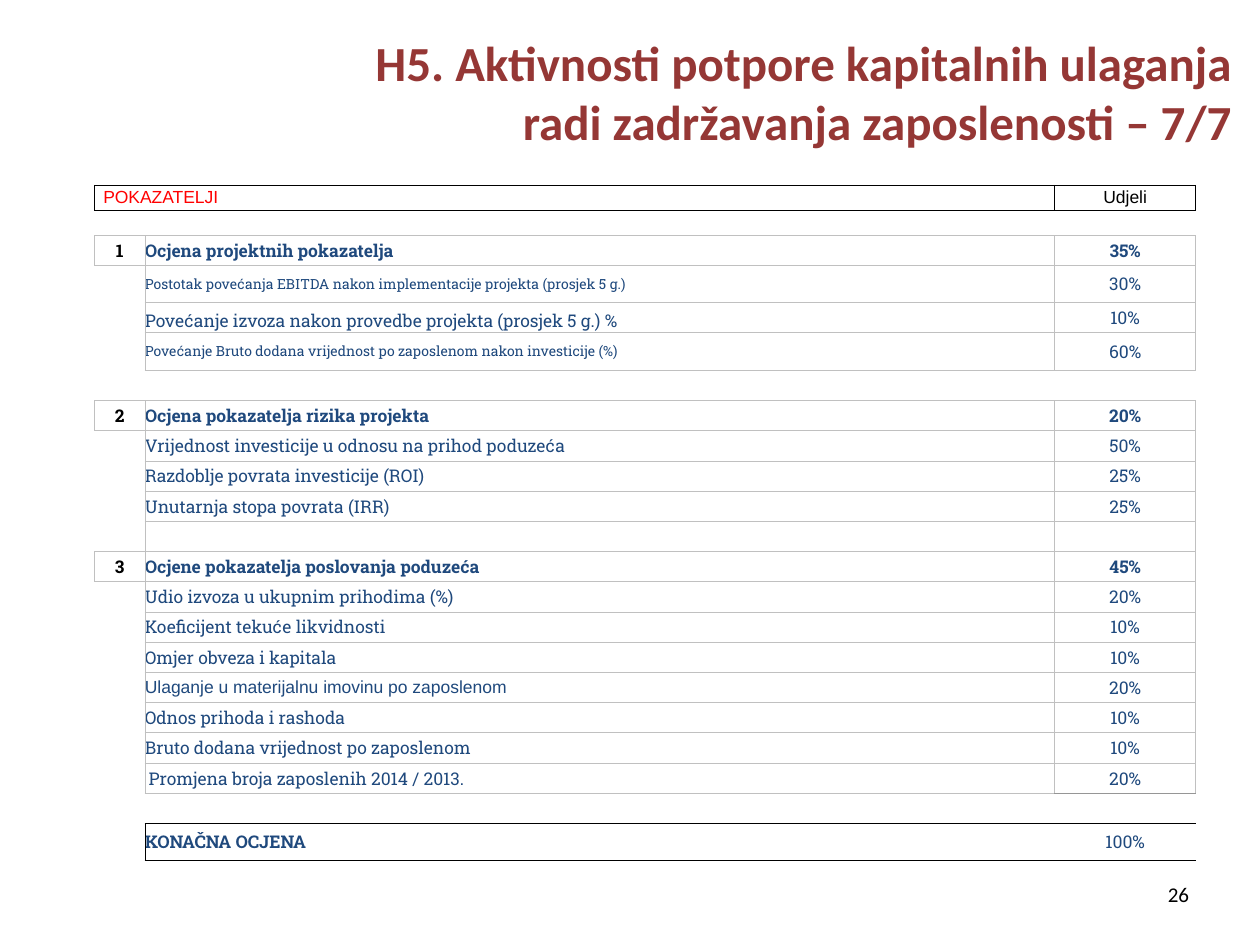
from lxml import etree
from pptx import Presentation
from pptx import util as u
from pptx.dml.color import RGBColor
from pptx.enum import text as t
from pptx.oxml import ns

RED, NAVY, BLACK = "953735", "1F497D", "000000"
GREY, DARK_GREY = "C0C0C0", "969696"
SLAB = "Roboto Slab"
ROW = 0.24

# kind, number, label, share, then row height, label size and label font where they differ
ROWS = [
    ("title", "", "POKAZATELJI", "Udjeli", {"height": 0.2}),
    ("gap", "", "", "", {"height": 0.2}),
    ("head", "1", "Ocjena projektnih pokazatelja", "35%", {}),
    ("item", "", "Postotak povećanja EBITDA nakon implementacije projekta (prosjek 5 g.)", "30%",
     {"height": 0.29, "size": 8}),
    ("item", "", "Povećanje izvoza nakon provedbe projekta (prosjek 5 g.) %", "10%",
     {"anchor": t.MSO_ANCHOR.BOTTOM}),
    ("item", "", "Povećanje Bruto dodana vrijednost po zaposlenom nakon investicije (%)", "60%",
     {"height": 0.3, "size": 8}),
    ("gap", "", "", "", {}),
    ("head", "2", "Ocjena pokazatelja rizika projekta", "20%", {}),
    ("item", "", "Vrijednost investicije u odnosu na prihod poduzeća", "50%", {}),
    ("item", "", "Razdoblje povrata investicije (ROI)", "25%", {}),
    ("item", "", "Unutarnja stopa povrata (IRR)", "25%", {}),
    ("item", "", "", "", {}),
    ("head", "3", "Ocjene pokazatelja poslovanja poduzeća", "45%", {}),
    ("item", "", "Udio izvoza u ukupnim prihodima (%)", "20%", {}),
    ("item", "", "Koeficijent tekuće likvidnosti", "10%", {}),
    ("item", "", "Omjer obveza i kapitala", "10%", {}),
    ("item", "", "Ulaganje u materijalnu imovinu po zaposlenom", "20%", {"font": "Arial"}),
    ("item", "", "Odnos prihoda i rashoda", "10%", {}),
    ("item", "", "Bruto dodana vrijednost po zaposlenom", "10%", {}),
    ("item", "", "Promjena broja zaposlenih 2014 / 2013.", "20%", {"indent": 0.03}),
    ("gap", "", "", "", {}),
    ("total", "", "KONAČNA OCJENA", "100%", {"height": 0.29}),
]

# Sides that each kind of row outlines, by column, and the line colour
OUTLINES = {
    "title": (("LTB", "TRB", "LTRB"), BLACK),
    "gap": (("", "", ""), GREY),
    "head": (("LTRB", "LTRB", "LTRB"), GREY),
    "item": (("", "LTRB", "LTRB"), GREY),
    "total": (("", "LTB", "TB"), BLACK),
}
NEIGHBOUR = {"L": (0, -1, "R"), "R": (0, 1, "L"), "T": (-1, 0, "B"), "B": (1, 0, "T")}


def colour(value):
    return RGBColor.from_string(value)


def find_edges():
    """Map (row, column, side) to a colour, the same on both sides of a shared edge."""
    edges = {}

    def draw(row, column, side, value):
        down, right, opposite = NEIGHBOUR[side]
        edges[row, column, side] = value
        edges[row + down, column + right, opposite] = value

    for row, (kind, *_) in enumerate(ROWS):
        columns, value = OUTLINES[kind]
        for column, sides in enumerate(columns):
            for side in sides:
                draw(row, column, side, value)
    draw(len(ROWS) - 3, 2, "B", DARK_GREY)
    return edges


class Page:
    def __init__(self, deck):
        self.slide = deck.slides.add_slide(deck.slide_layouts[6])

    def style(self, para, size, font, value, bold=False, align=t.PP_ALIGN.LEFT):
        para.alignment = align
        for span in para.runs:
            span.font.size = u.Pt(size)
            span.font.name = font
            span.font.bold = bold
            span.font.color.rgb = colour(value)

    def label(self, left, top, width, height, wording, *style, **options):
        box = self.slide.shapes.add_textbox(*map(u.Inches, (left, top, width, height)))
        box.text_frame.word_wrap = True
        para = box.text_frame.paragraphs[0]
        para.text = wording
        self.style(para, *style, **options)
        return para

    def cell(self, cell, wording, size, font, value, bold, align,
             anchor=t.MSO_ANCHOR.MIDDLE, indent=0):
        cell.margin_left = u.Inches(indent)
        cell.margin_right = cell.margin_top = cell.margin_bottom = 0
        cell.vertical_anchor = anchor
        para = cell.text_frame.paragraphs[0]
        if wording:
            para.text = wording
            self.style(para, size, font, value, bold, align)
        else:  # keeps an empty row from growing
            etree.SubElement(para._p, ns.qn("a:endParaRPr"), sz="1000")

    def borders(self, cell, row, column, edges):
        cell.fill.background()
        properties = cell._tc.get_or_add_tcPr()
        for place, side in enumerate("LRTB"):
            line = etree.Element(ns.qn("a:ln" + side), w=str(u.Pt(0.5)))
            value = edges.get((row, column, side))
            if value:
                fill = etree.SubElement(line, ns.qn("a:solidFill"))
                etree.SubElement(fill, ns.qn("a:srgbClr"), val=value)
            else:
                etree.SubElement(line, ns.qn("a:noFill"))
            properties.insert(place, line)

    def score_table(self, left, top, widths):
        heights = [extra.get("height", ROW) for *_, extra in ROWS]
        frame = self.slide.shapes.add_table(
            len(ROWS), len(widths),
            *map(u.Inches, (left, top, sum(widths), sum(heights))))
        table = frame.table
        table.first_row = table.horz_banding = False
        for column, width in zip(table.columns, widths):
            column.width = u.Inches(width)
        for row, height in zip(table.rows, heights):
            row.height = u.Inches(height)

        edges = find_edges()
        centre, start = t.PP_ALIGN.CENTER, t.PP_ALIGN.LEFT
        for row, (kind, number, name, share, extra) in enumerate(ROWS):
            first, middle, last = (table.cell(row, column) for column in range(3))
            for column, cell in enumerate((first, middle, last)):
                self.borders(cell, row, column, edges)
            if kind == "title":
                first.merge(middle)
                self.cell(first, name, 10, "Arial", "FF0000", False, start, indent=0.07)
                self.cell(last, share, 10, "Arial", BLACK, False, centre)
                continue
            head = kind == "head"
            self.cell(first, number, 10, SLAB, BLACK, True, centre)
            self.cell(middle, name, extra.get("size", 10), extra.get("font", SLAB), NAVY,
                      head or kind == "total", start,
                      extra.get("anchor", t.MSO_ANCHOR.MIDDLE), extra.get("indent", 0))
            self.cell(last, share, 10, SLAB, NAVY, head, centre)


def main():
    deck = Presentation()
    deck.slide_width, deck.slide_height = u.Inches(10), u.Inches(7.5)
    page = Page(deck)

    # Heading
    page.label(2.17, 0.21, 7.7, 0.89,
               "H5. Aktivnosti potpore kapitalnih ulaganja radi zadržavanja zaposlenosti – 7/7",
               28, "Calibri", RED, bold=True, align=t.PP_ALIGN.RIGHT)

    # Indicators and their shares
    page.score_table(0.75, 1.47, (0.4, 7.22, 1.12))

    # Page number
    number = page.label(7.17, 6.95, 2.4, 0.4, "26", 12, "Calibri", BLACK)
    number._p.get_or_add_pPr().set("marL", str(u.Inches(2)))

    deck.save("out.pptx")


if __name__ == "__main__":
    main()
